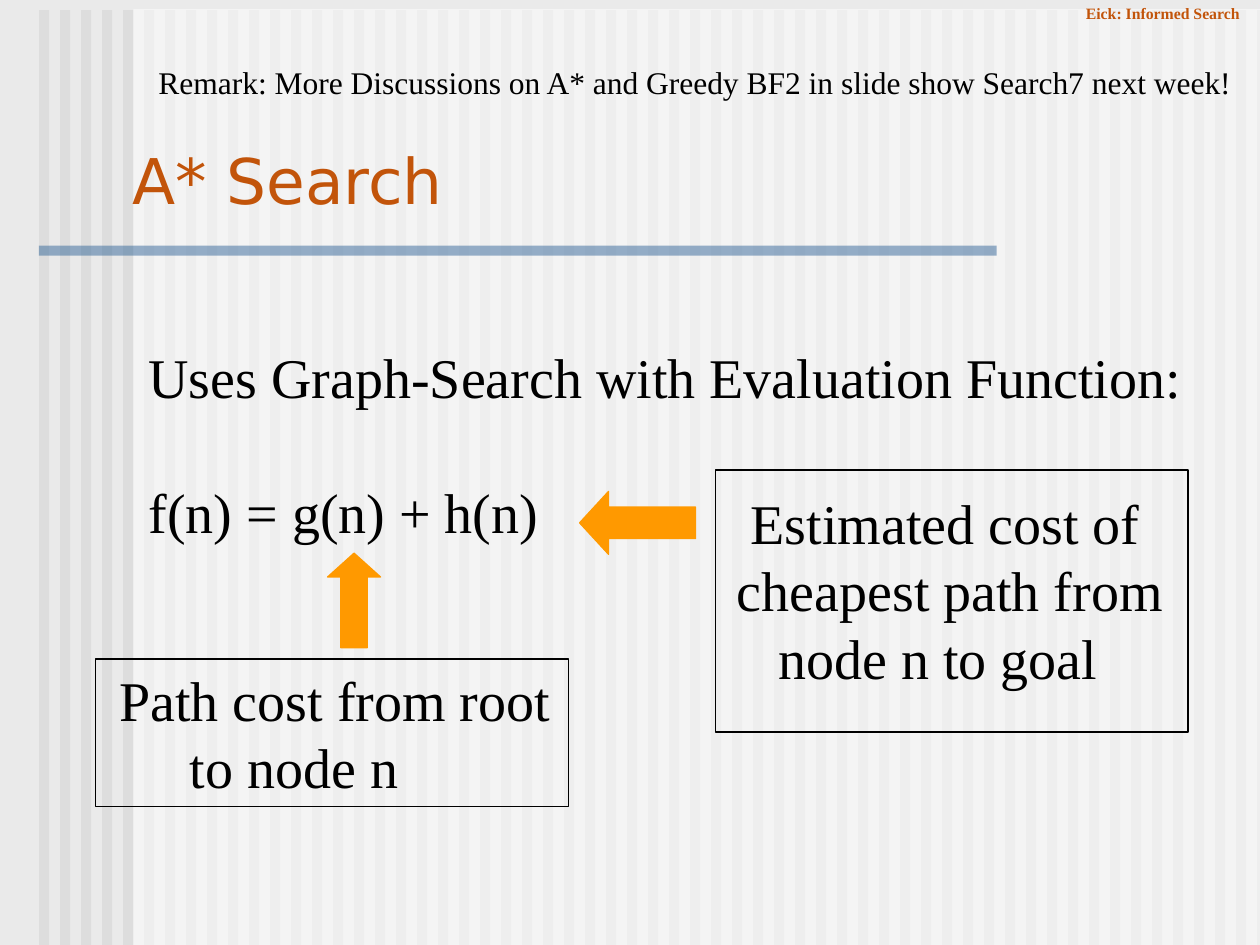
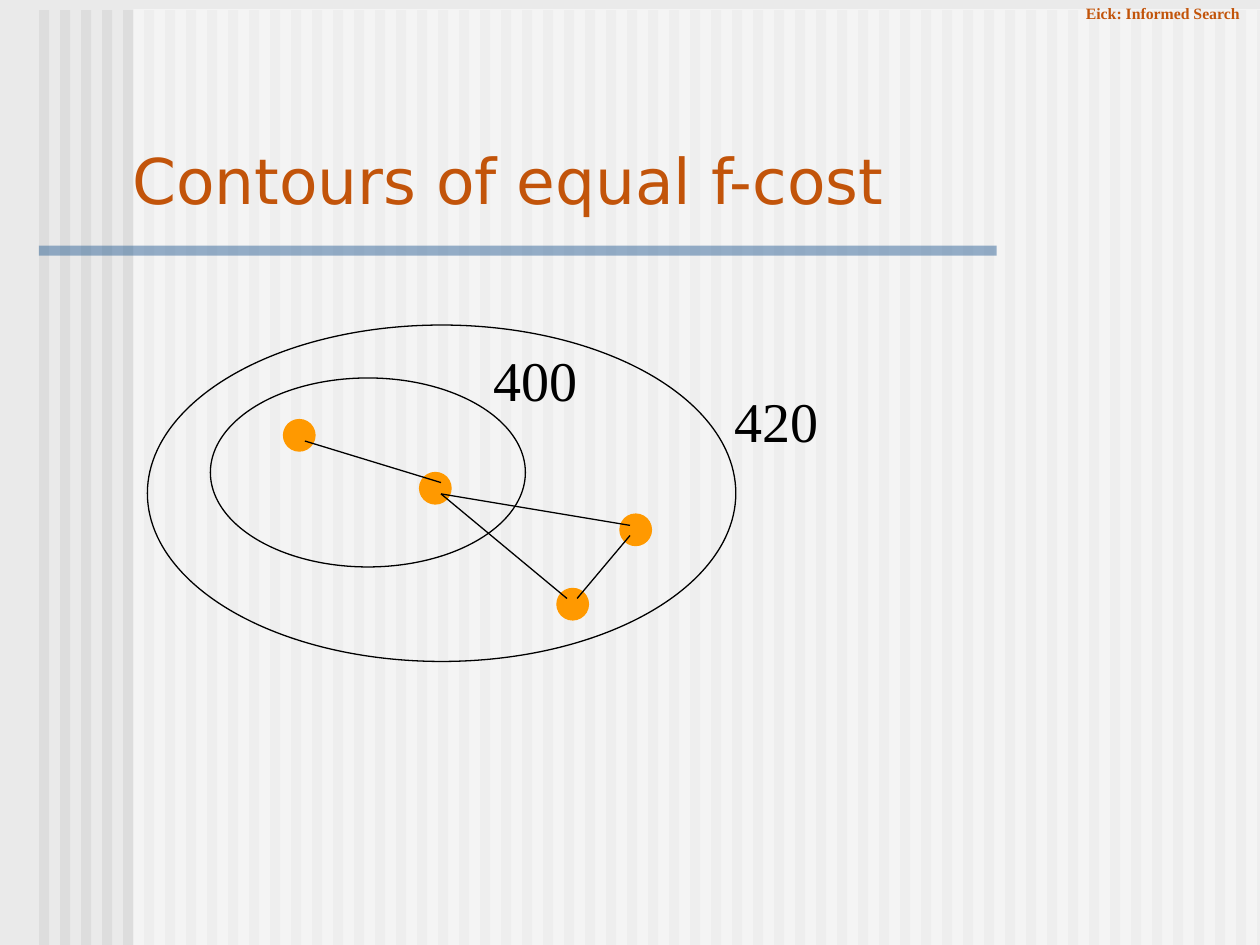
from lxml.etree import SubElement
from pptx import Presentation
from pptx.dml.color import RGBColor
from pptx.enum.shapes import MSO_CONNECTOR, MSO_SHAPE
from pptx.enum.text import MSO_ANCHOR
from pptx.oxml.ns import qn
from pptx.util import Inches, Pt

SERIF, SANS = "Times New Roman", "DejaVu Sans"
PAPER, STRIPE, PANEL, RULE = "EAEAEA", "DDDDDD", "FFFFFF", "336699"
ACCENT, ORANGE, BLACK = "C2540A", "FF9900", "000000"
LINE_HEIGHT = 1.2


def rgb(value):
    return RGBColor.from_string(value)


def add_shape(s, kind, box, fill=None, line=None, alpha=None):
    sp = s.shapes.add_shape(kind, *map(Inches, box))
    sp.shadow.inherit = False
    if fill:
        sp.fill.solid()
        sp.fill.fore_color.rgb = rgb(fill)
    else:
        sp.fill.background()
    if line:
        sp.line.color.rgb = rgb(line)
        sp.line.width = Pt(0.75)
    else:
        sp.line.fill.background()
    if alpha:
        color = sp.element.spPr.find(qn("a:solidFill"))[0]
        SubElement(color, qn("a:alpha"), val=str(alpha * 1000))
    return sp


def add_text(s, box, lines, size=32, color=BLACK, font=SERIF, bold=False,
             gap=0, indents=()):
    sp = s.shapes.add_textbox(*map(Inches, box))
    tf = sp.text_frame
    tf.word_wrap = True
    tf.margin_right = 0
    tf.text = "\n".join(lines)
    for i, p in enumerate(tf.paragraphs):
        p.font.name = font
        p.font.size = Pt(size)
        p.font.bold = bold
        p.font.color.rgb = rgb(color)
        if font == SERIF:
            p.line_spacing = Pt(size * LINE_HEIGHT)
        if i and gap:
            p.space_before = Pt(gap)
        if i < len(indents):
            p._p.get_or_add_pPr().set("marL", str(Inches(indents[i])))
    return sp


def add_title(s, title):
    sp = add_text(s, (0.95, 1.07, 8.93, 0.7), [title], 36, ACCENT, SANS)
    sp.text_frame.vertical_anchor = MSO_ANCHOR.BOTTOM


def add_line(s, start, end):
    c = s.shapes.add_connector(MSO_CONNECTOR.STRAIGHT, *map(Inches, start + end))
    c.line.color.rgb = rgb(BLACK)
    c.line.width = Pt(0.75)
    SubElement(c.element.spPr, qn("a:effectLst"))


def add_arrow(s, kind, box, head):
    sp = add_shape(s, kind, box, ORANGE, ORANGE)
    sp.adjustments[1] = head


def add_node(s, left, top):
    add_shape(s, MSO_SHAPE.OVAL, (left, top, 0.25, 0.25), ORANGE, ORANGE)


def add_contour(s, box, label, label_at):
    add_shape(s, MSO_SHAPE.OVAL, box, line=BLACK)
    add_text(s, label_at + (0.87, 0.63), [label])


def decorate_layout(layout, s):
    layout.background.fill.solid()
    layout.background.fill.fore_color.rgb = rgb(PAPER)
    for ph in list(layout.placeholders):
        layout.shapes.element.remove(ph.element)
    for i in range(59):
        add_shape(s, MSO_SHAPE.RECTANGLE, (0.31 + i / 6, 0.08, 0.08, 7.5), STRIPE)
    add_shape(s, MSO_SHAPE.RECTANGLE, (1.06, 0.07, 9.26, 7.5), PANEL, alpha=50)
    add_shape(s, MSO_SHAPE.RECTANGLE, (0.31, 1.95, 7.6, 0.08), RULE, alpha=50)
    add_text(s, (8.52, -0.02, 1.44, 0.25), ["Eick: Informed Search"], 9, ACCENT,
             bold=True)
    for sp in list(s.shapes):
        layout.shapes.element.append(sp.element)


def build_search(s):
    add_title(s, "A* Search")
    add_text(s, (1.08, 2.67, 8.48, 1.72),
             ["Uses Graph-Search with Evaluation Function:", "f(n) = g(n) + h(n)"],
             gap=32 * LINE_HEIGHT)
    add_text(s, (0.85, 5.23, 3.73, 1.17), ["Path cost from root", "to node n"],
             indents=(0, 0.56))
    add_shape(s, MSO_SHAPE.RECTANGLE, (0.76, 5.23, 3.75, 1.17), line=BLACK)
    add_arrow(s, MSO_SHAPE.UP_ARROW, (2.6, 4.39, 0.42, 0.75), 0.45)
    add_text(s, (5.75, 3.83, 3.7, 1.7),
             ["Estimated cost of", "cheapest path from", "node n to goal"],
             indents=(0.11, 0, 0.33))
    add_shape(s, MSO_SHAPE.RECTANGLE, (5.68, 3.73, 3.75, 2.08), line=BLACK)
    add_arrow(s, MSO_SHAPE.LEFT_ARROW, (4.6, 3.9, 0.92, 0.5), 0.46)
    add_text(s, (1.16, 0.45, 8.93, 0.4),
             ["Remark: More Discussions on A* and Greedy BF2 in slide show "
              "Search7 next week!"], 18)


def build_contours(s):
    add_title(s, "Contours of equal f-cost")
    for left, top in [(2.25, 3.33), (3.33, 3.75), (4.92, 4.08), (4.42, 4.67)]:
        add_node(s, left, top)
    add_contour(s, (1.67, 3, 2.5, 1.5), "400", (3.82, 2.69))
    add_contour(s, (1.17, 2.58, 4.67, 2.67), "420", (5.73, 3.02))
    for start, end in [((2.42, 3.5), (3.5, 3.83)), ((3.5, 3.92), (5, 4.17)),
                       ((5, 4.25), (4.58, 4.75)), ((3.5, 3.92), (4.5, 4.75))]:
        add_line(s, start, end)


def main():
    prs = Presentation()
    prs.slide_width, prs.slide_height = Inches(10), Inches(7.5)
    blank = prs.slide_layouts[6]
    search = prs.slides.add_slide(blank)
    decorate_layout(blank, search)
    build_search(search)
    build_contours(prs.slides.add_slide(blank))
    prs.save("out.pptx")


if __name__ == "__main__":
    main()
